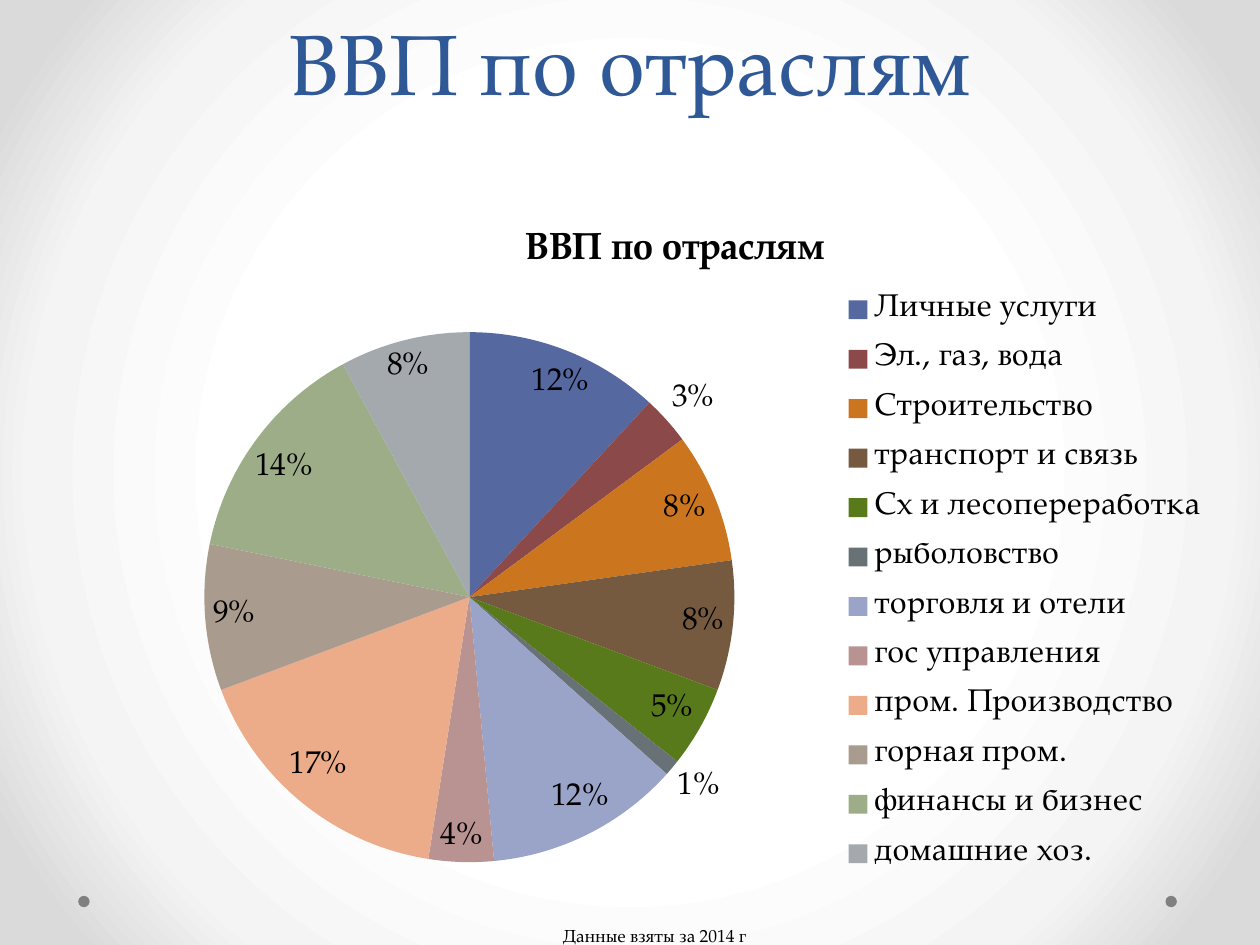
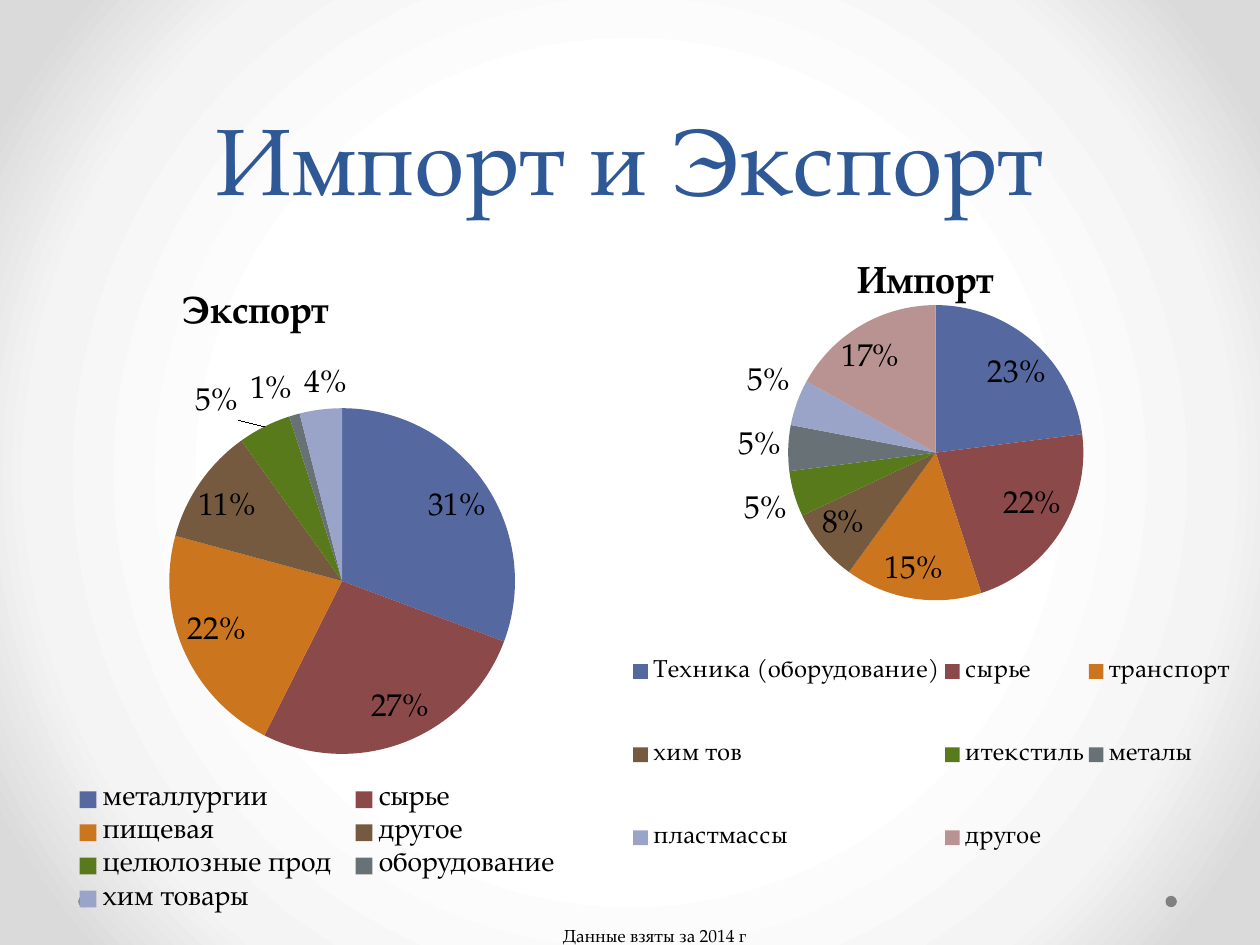
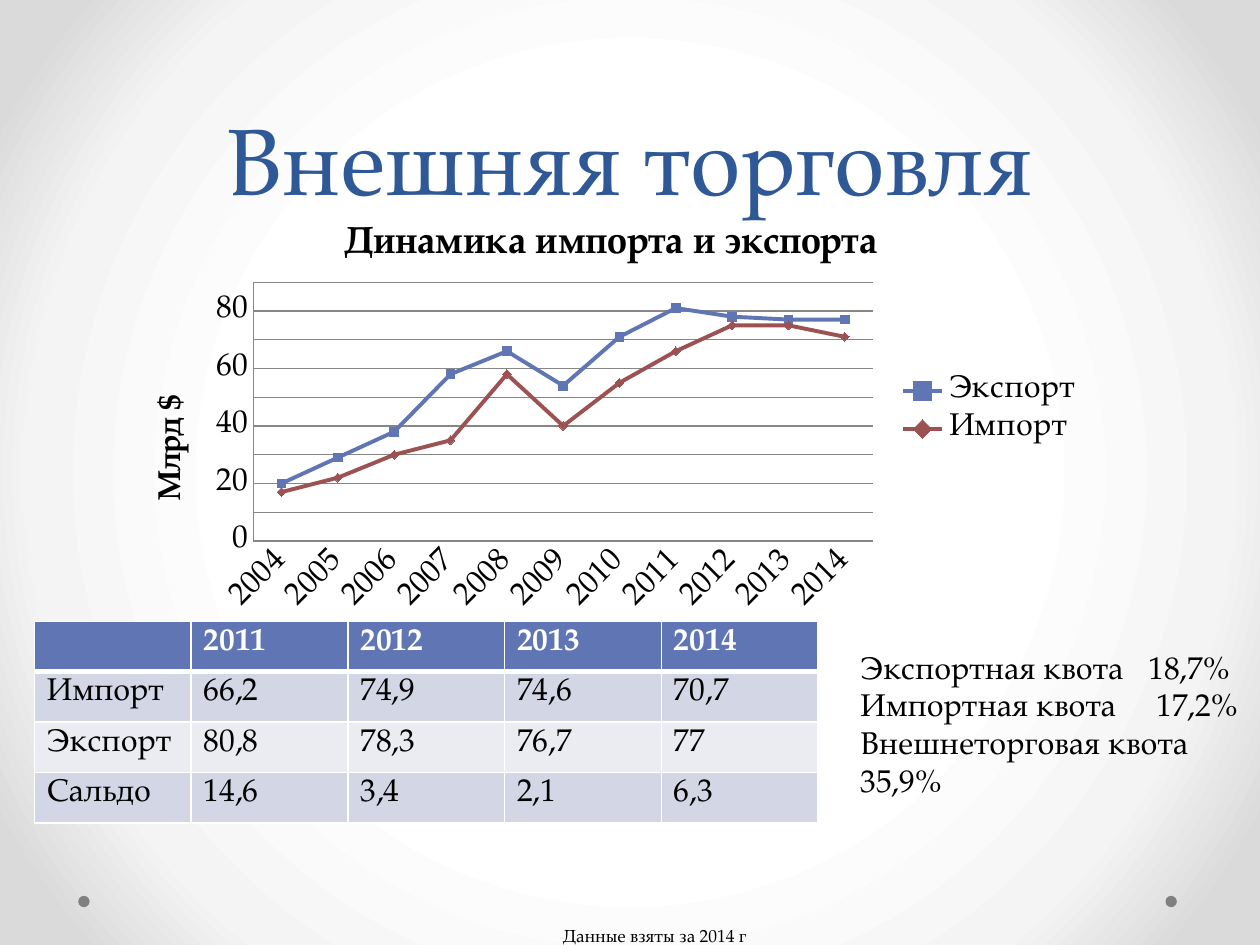
from pptx import Presentation
from pptx.chart.data import CategoryChartData
from pptx.dml.color import RGBColor
from pptx.enum.chart import (XL_CHART_TYPE, XL_LABEL_POSITION,
                             XL_LEGEND_POSITION, XL_MARKER_STYLE, XL_TICK_MARK)
from pptx.enum.shapes import MSO_SHAPE
from pptx.enum.text import MSO_ANCHOR, MSO_AUTO_SIZE, PP_ALIGN
from pptx.oxml import parse_xml
from pptx.oxml.ns import nsdecls, qn
from pptx.util import Pt

FONT = "TeX Gyre Pagella"
BLACK, WHITE, GREY, RULE = "000000", "FFFFFF", "808080", "868686"
NAVY, BLUE, RED = "2F5897", "6076B4", "9C5252"
BAND = ["D2D6E5", "EAECF2"]
SLICES = ["5568A0", "8B4A49", "CC751F", "755A3F", "587A1B", "687276",
          "9AA3C8", "B89392", "ECAB89", "AA9B8F", "9CAD87", "A4A9AD"]
STOPS = [(50, "FFFFFF"), (76, "F4F4F4"), (92, "DADADA")]
NOTE = "Данные взяты за 2014 г"


def color(text):
    return RGBColor.from_string(text)


def points(box):
    return [Pt(n) for n in box]


def style(font, size, tint=BLACK, bold=False):
    font.name, font.size, font.bold = FONT, Pt(size), bold
    font.color.rgb = color(tint)


def backdrop(master):
    """Give the master a round gradient that darkens to the corners."""
    master.background.fill.solid()
    frame = master.element.xpath(".//p:bgPr")[0]
    stops = "".join(f'<a:gs pos="{pos * 1000}"><a:srgbClr val="{tint}"/></a:gs>'
                    for pos, tint in STOPS)
    frame.replace(frame.find(qn("a:solidFill")), parse_xml(
        f'<a:gradFill {nsdecls("a")} rotWithShape="1"><a:gsLst>{stops}</a:gsLst>'
        '<a:path path="circle"><a:fillToRect l="50000" t="50000" r="50000" '
        'b="50000"/></a:path></a:gradFill>'))


def add_text(slide, box, lines, size, tabs=()):
    frame = slide.shapes.add_textbox(*points(box)).text_frame
    frame.word_wrap = True
    frame.text = "\n".join(lines)
    for para in frame.paragraphs:
        style(para.font, size)
    for para, tab in zip(frame.paragraphs, tabs):
        para._p.get_or_add_pPr().insert(0, parse_xml(
            f'<a:tabLst {nsdecls("a")}><a:tab pos="{Pt(tab)}" algn="l"/>'
            '</a:tabLst>'))


def add_slide(deck, title, size=54, drop=3.6):
    """Start a slide with its title, corner dots and source note."""
    slide = deck.slides.add_slide(deck.slide_layouts[5])
    for left in (44.7, 666):
        dot = slide.shapes.add_shape(MSO_SHAPE.OVAL,
                                     *points((left, 511.9, 6.5, 6.5)))
        dot.shadow.inherit = False
        dot.fill.solid()
        dot.fill.fore_color.rgb = color(GREY)
        dot.line.fill.background()
    head = slide.shapes.title
    head.left, head.top, head.width, head.height = points((36, 0, 648, 126))
    frame = head.text_frame
    frame.text = title
    frame.word_wrap = True
    frame.auto_size = MSO_AUTO_SIZE.NONE
    frame.vertical_anchor = MSO_ANCHOR.BOTTOM
    frame.margin_bottom = Pt(drop)
    para = frame.paragraphs[0]
    para.alignment = PP_ALIGN.CENTER
    para.line_spacing = Pt(58)
    style(para.font, size, NAVY)
    add_text(slide, (314.6, 524.9, 153.4, 19.4), [NOTE], 10)
    return slide


def place(node, box, spot=1):
    """Set a chart part's place as shares of the chart area."""
    old = node.find(qn("c:layout"))
    if old is not None:
        node.remove(old)
    goal = "" if spot else '<c:layoutTarget val="inner"/>'
    modes = '<c:xMode val="edge"/><c:yMode val="edge"/>'
    sizes = "".join(f'<c:{key} val="{val}"/>' for key, val in zip("xywh", box))
    node.insert(spot, parse_xml(
        f'<c:layout {nsdecls("c")}><c:manualLayout>{goal}{modes}{sizes}'
        '</c:manualLayout></c:layout>'))


def add_chart(slide, kind, box, title, cats, rows, side, size=18):
    data = CategoryChartData()
    data.categories = cats
    for name, vals in rows:
        data.add_series(name, vals)
    chart = slide.shapes.add_chart(kind, *points(box), data).chart
    style(chart.font, 18)
    chart.has_title = True
    frame = chart.chart_title.text_frame
    frame.text = title
    style(frame.paragraphs[0].font, 21.6, bold=True)
    chart.has_legend = True
    chart.legend.position = side
    chart.legend.include_in_layout = False
    style(chart.legend.font, size)
    return chart


def add_pie(slide, box, title, shares, plot, key, side, size=18):
    chart = add_chart(slide, XL_CHART_TYPE.PIE, box, title, list(shares),
                      [(title, list(shares.values()))], side, size)
    place(chart.element.xpath(".//c:plotArea")[0], plot, 0)
    place(chart.legend._element, key)
    pie = chart.plots[0]
    pie.vary_by_categories = True
    for index, tint in enumerate(SLICES[:len(shares)]):
        fill = pie.series[0].points[index].format.fill
        fill.solid()
        fill.fore_color.rgb = color(tint)
    pie.has_data_labels = True
    labels = pie.data_labels
    labels.show_percentage, labels.show_value = True, False
    labels.number_format, labels.number_format_is_linked = "0%", False
    labels.position = XL_LABEL_POSITION.BEST_FIT
    style(labels.font, 18)
    return chart


def add_trend(slide, box, title, cats, rows, unit):
    chart = add_chart(slide, XL_CHART_TYPE.LINE_MARKERS, box, title, cats, rows,
                      XL_LEGEND_POSITION.RIGHT)
    chart.plots[0].vary_by_categories = False
    marks = (XL_MARKER_STYLE.SQUARE, XL_MARKER_STYLE.DIAMOND)
    for line, tint, mark in zip(chart.plots[0].series, (BLUE, RED), marks):
        line.smooth = False
        line.format.line.width = Pt(2.25)
        line.format.line.color.rgb = color(tint)
        line.marker.style, line.marker.size = mark, 5
        line.marker.format.fill.solid()
        line.marker.format.fill.fore_color.rgb = color(tint)
        line.marker.format.line.color.rgb = color(tint)
    years, scale = chart.category_axis, chart.value_axis
    for axis in (years, scale):
        axis.major_tick_mark = axis.minor_tick_mark = XL_TICK_MARK.NONE
        axis.format.line.color.rgb = color(RULE)
        style(axis.tick_labels.font, 18)
    years._element.xpath("./c:txPr/a:bodyPr")[0].set("rot", str(-45 * 60000))
    scale.minimum_scale, scale.maximum_scale, scale.major_unit = 0, 90, 10
    scale.major_gridlines.format.line.color.rgb = color(RULE)
    scale.has_title = True
    frame = scale.axis_title.text_frame
    frame.text = unit
    style(frame.paragraphs[0].font, 18, bold=True)


def add_table(slide, box, rows):
    table = slide.shapes.add_table(len(rows), len(rows[0]), *points(box)).table
    table.horz_banding = False
    for r, row in enumerate(rows):
        table.rows[r].height = Pt(box[3] / len(rows))
        for c, text in enumerate(row):
            cell = table.cell(r, c)
            cell.text = text
            style(cell.text_frame.paragraphs[0].font, 18,
                  BLACK if r else WHITE, bold=r == 0)
            for side in "LRTB":
                wide = 3 if r == 0 and side == "B" else 1
                cell._tc.get_or_add_tcPr().append(parse_xml(
                    f'<a:ln{side} {nsdecls("a")} w="{Pt(wide)}">'
                    f'<a:solidFill><a:srgbClr val="{WHITE}"/></a:solidFill>'
                    f'</a:ln{side}>'))
            cell.fill.solid()
            cell.fill.fore_color.rgb = color(BAND[(r - 1) % 2] if r else BLUE)


def main():
    deck = Presentation()
    deck.slide_width, deck.slide_height = Pt(720), Pt(540)
    backdrop(deck.slide_master)
    right, below = XL_LEGEND_POSITION.RIGHT, XL_LEGEND_POSITION.BOTTOM

    slide = add_slide(deck, "ВВП по отраслям", 49, 61.6)
    add_pie(slide, (72, 113.8, 628, 411), "ВВП по отраслям", {
        "Личные услуги": 12, "Эл., газ, вода": 3, "Строительство": 8,
        "транспорт и связь": 8, "Сх и лесопереработка": 5, "рыболовство": 1,
        "торговля и отели": 12, "гос управления": 4, "пром. Производство": 17,
        "горная пром.": 9, "финансы и бизнес": 14, "домашние хоз.": 8,
    }, (0.071, 0.185, 0.483, 0.737), (0.648, 0.107, 0.34, 0.85), right)

    slide = add_slide(deck, "Импорт и Экспорт")
    chart = add_pie(slide, (8.6, 157, 345.6, 368.6), "Экспорт", {
        "металлургии": 31, "сырье": 27, "пищевая": 22, "другое": 11,
        "целюлозные прод": 5, "оборудование": 1, "хим товары": 4,
    }, (0.255, 0.207, 0.572, 0.536), (0.082, 0.784, 0.835, 0.214), below, 16)
    place(chart.chart_title._element, (0.266, 0.015))
    add_pie(slide, (337.7, 133.9, 382.3, 385.2), "Импорт", {
        "Техника (оборудование)": 23, "сырье": 22, "транспорт": 15,
        "хим тов": 8, "итекстиль": 5, "металы": 5, "пластмассы": 5,
        "другое": 17,
    }, (0.031, 0.105, 0.969, 0.438), (0.055, 0.544, 0.908, 0.46), below, 14)

    slide = add_slide(deck, "Внешняя торговля")
    add_trend(slide, (72, 113.8, 554.4, 241.2), "Динамика импорта и экспорта",
              [str(year) for year in range(2004, 2015)],
              [("Экспорт", [20, 29, 38, 58, 66, 54, 71, 81, 78, 77, 77]),
               ("Импорт", [17, 22, 30, 35, 58, 40, 55, 66, 75, 75, 71])],
              "Млрд $")
    add_table(slide, (19.6, 355, 448, 112.4), [
        ["", "2011", "2012", "2013", "2014"],
        ["Импорт", "66,2", "74,9", "74,6", "70,7"],
        ["Экспорт", "80,8", "78,3", "76,7", "77"],
        ["Сальдо", "14,6", "3,4", "2,1", "6,3"]])
    add_text(slide, (484.6, 366.5, 235.4, 94.3), [
        "Экспортная квота\t18,7%", "Импортная квота\t17,2%",
        "Внешнеторговая квота 35,9%"], 18, (164.6, 169.2))
    deck.save("out.pptx")


if __name__ == "__main__":
    main()
